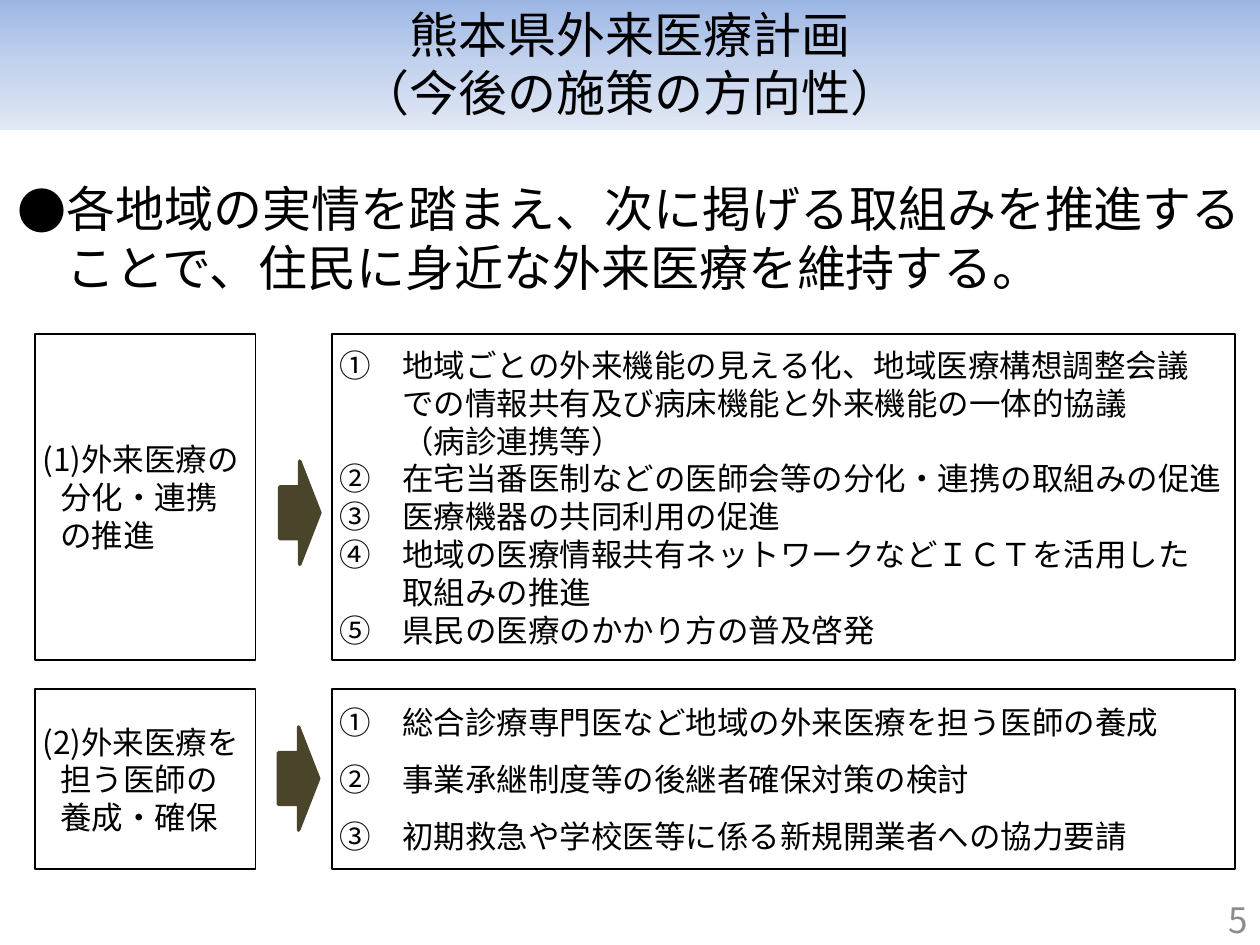
"""Build the slide on the direction of the outpatient care plan."""
from copy import deepcopy

from pptx import Presentation
from pptx.dml.color import RGBColor as Rgb
from pptx.enum.shapes import MSO_SHAPE as Kind
from pptx.enum.text import MSO_ANCHOR as Anchor, PP_ALIGN as Align
from pptx.oxml.ns import qn
from pptx.util import Pt

FONT = "Noto Sans CJK JP"
HUE = {"ink": "000000", "arrow": "4A452A", "page": "8C8C8C"}
FADE = [(0, "9AB5E4"), (0.5, "C2D1ED"), (1, "E1E8F5")]
TITLE = "熊本県外来医療計画\v（今後の施策の方向性）"
LEAD = "各地域の実情を踏まえ、次に掲げる取組みを推進することで、住民に身近な外来医療を維持する。"
ROWS = [
    {
        "top": 190.8, "high": 186.5, "arrow": (159.8, 263.5), "gap": 0,
        "name": "(1)外来医療の分化・連携の推進",
        "items": [
            "①　地域ごとの外来機能の見える化、地域医療構想調整会議"
            "\vでの情報共有及び病床機能と外来機能の一体的協議\v（病診連携等）",
            "②　在宅当番医制などの医師会等の分化・連携の取組みの促進",
            "③　医療機器の共同利用の促進",
            "④　地域の医療情報共有ネットワークなどＩＣＴを活用した\v取組みの推進",
            "⑤　県民の医療のかかり方の普及啓発",
        ],
    },
    {
        "top": 393.8, "high": 103, "arrow": (159.1, 415.4), "gap": 11,
        "name": "(2)外来医療を担う医師の養成・確保",
        "items": [
            "①　総合診療専門医など地域の外来医療を担う医師の養成",
            "②　事業承継制度等の後継者確保対策の検討",
            "③　初期救急や学校医等に係る新規開業者への協力要請",
        ],
    },
]

deck = Presentation()
deck.slide_width, deck.slide_height = Pt(720), Pt(540)
slide = deck.slides.add_slide(deck.slide_layouts[6])


def shape(kind, box, fill=None, line=None, width=1):
    item = slide.shapes.add_shape(kind, *map(Pt, box))
    item.shadow.inherit = False
    if fill:
        item.fill.solid()
        item.fill.fore_color.rgb = Rgb.from_string(fill)
    else:
        item.fill.background()
    if line:
        item.line.color.rgb = Rgb.from_string(line)
        item.line.width = Pt(width)
    else:
        item.line.fill.background()
    return item


def write(item, lines, size=18, hue="ink", align=Align.LEFT, anchor=Anchor.MIDDLE,
          pad=(4.3, 4.3, 4.3, 4.3), hang=0, gap=0, mark=None):
    frame = item.text_frame
    frame.word_wrap = True
    frame.vertical_anchor = anchor
    (frame.margin_left, frame.margin_top,
     frame.margin_right, frame.margin_bottom) = map(Pt, pad)
    for n, text in enumerate(lines):
        para = frame.add_paragraph() if n else frame.paragraphs[0]
        para.text, para.alignment = text, align
        para.space_before = Pt(gap if n else 0)
        props = para._p.get_or_add_pPr()
        props.set("marL", str(Pt(hang)))
        props.set("indent", str(Pt(-hang)))
        if mark:
            props.append(props.makeelement(qn("a:buFont"), {"typeface": FONT}))
            props.append(props.makeelement(qn("a:buChar"), {"char": mark}))
        for run in para.runs:
            font = run.font
            font.size, font.name = Pt(size), FONT
            font.color.rgb = Rgb.from_string(HUE[hue])
            face = run._r.rPr.makeelement(qn("a:ea"), {"typeface": FONT})
            run._r.rPr.find(qn("a:latin")).addnext(face)


def shade(item, stops):
    item.fill.gradient()
    item.fill.gradient_angle = 270
    first = item.fill.gradient_stops[0]._gs
    first.addnext(deepcopy(first))
    for stop, (place, hue) in zip(item.fill.gradient_stops, stops):
        stop.position = place
        stop.color.rgb = Rgb.from_string(hue)


wide = (7.2, 3.6, 7.2, 3.6)
band = shape(Kind.RECTANGLE, (0, -2.2, 720, 76.3))
shade(band, FADE)
write(band, [TITLE], size=28, align=Align.CENTER, pad=wide)

page = slide.shapes.add_textbox(*map(Pt, (552.2, 511.2, 167.8, 28.8)))
write(page, ["5"], size=20, hue="page", align=Align.RIGHT, pad=wide)

for row in ROWS:
    top, high = row["top"], row["high"]
    name = shape(Kind.RECTANGLE, (20, top, 126, high), line=HUE["ink"])
    write(name, [row["name"]], hang=10)
    shape(Kind.RIGHT_ARROW, (*row["arrow"], 23, 59), HUE["arrow"], HUE["arrow"], 2)
    plan = shape(Kind.RECTANGLE, (189.7, top, 516.2, high), line=HUE["ink"])
    write(plan, row["items"], hang=36, gap=row["gap"])

lead = slide.shapes.add_textbox(*map(Pt, (2.9, 79.2, 714.2, 94.3)))
write(lead, [LEAD], size=28, anchor=Anchor.TOP, pad=(7.2, 22.8, 2.9, 3.6),
      hang=28, mark="●")

deck.save("out.pptx")
